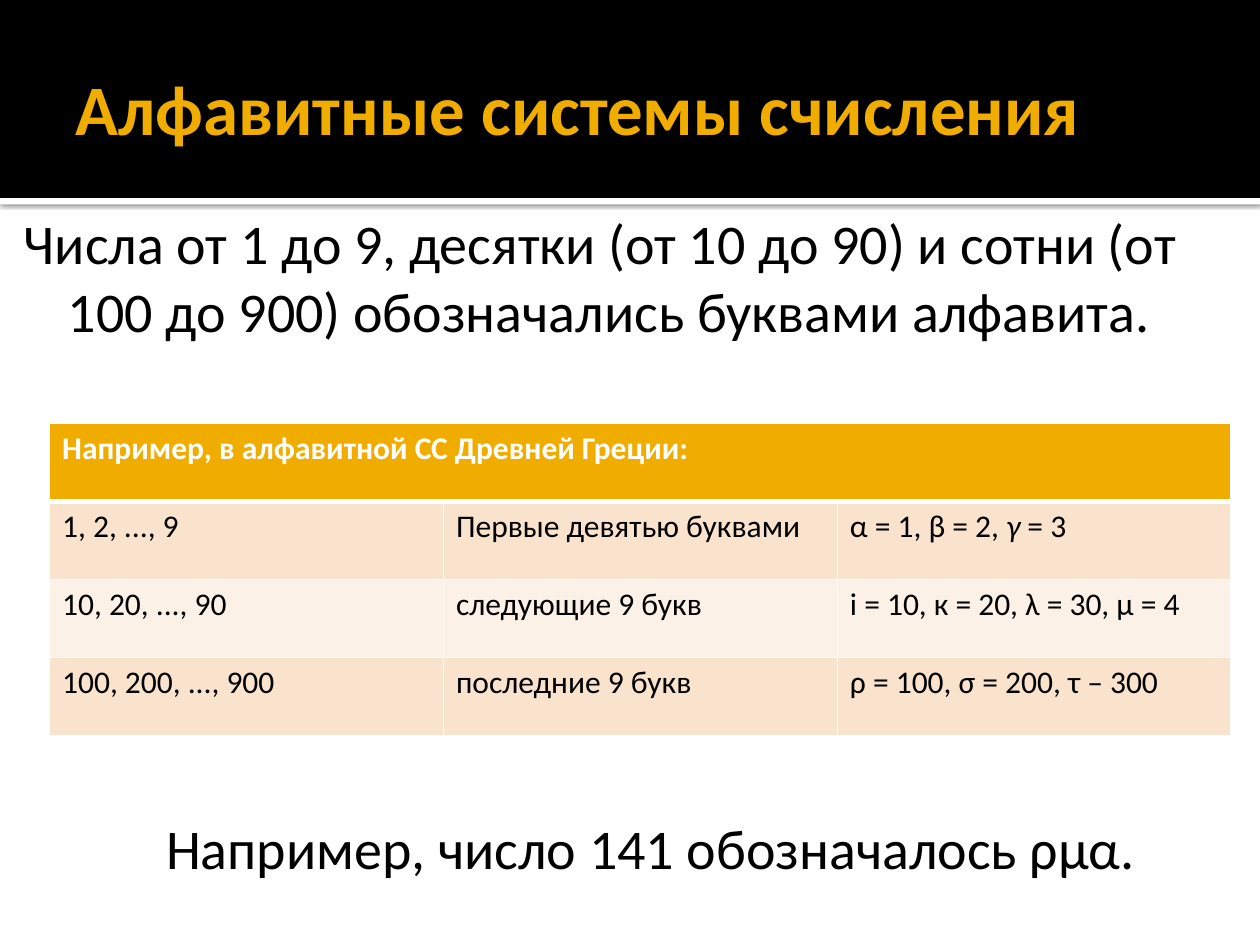
import pptx
import pptx.util
import pptx.dml.color
import pptx.enum.shapes
import pptx.enum.text
import pptx.oxml
from pptx.util import Cm, Pt

NS = 'xmlns:a="http://schemas.openxmlformats.org/drawingml/2006/main"'
ALIGN = pptx.enum.text.PP_ALIGN
ANCHOR = pptx.enum.text.MSO_ANCHOR


def rgb(value):
    return pptx.dml.color.RGBColor.from_string(value)


class Deck:
    font = "Calibri"
    black, white, accent = "000000", "FFFFFF", "F0AD00"
    bands = ("F9E3CC", "FCF1E7")

    def __init__(self, width, height):
        self.prs = pptx.Presentation()
        self.prs.slide_width, self.prs.slide_height = Cm(width), Cm(height)
        self.s = self.prs.slides.add_slide(self.prs.slide_layouts[5])

    def style(self, p, size, color, bold=False):
        for r in p.runs:
            r.font.name, r.font.size, r.font.bold = self.font, Pt(size), bold
            r.font.color.rgb = rgb(color)

    def margins(self, tf, *values):
        tf.margin_left, tf.margin_top, tf.margin_right, tf.margin_bottom = map(Cm, values)

    def band(self, x, y, w, h, color, shadow=False):
        sp = self.s.shapes.add_shape(
            pptx.enum.shapes.MSO_SHAPE.RECTANGLE, Cm(x), Cm(y), Cm(w), Cm(h))
        sp.shadow.inherit = False
        sp.fill.solid()
        sp.fill.fore_color.rgb = rgb(color)
        sp.line.fill.background()
        if shadow:
            effects = sp._element.spPr.find(pptx.oxml.ns.qn("a:effectLst"))
            effects.append(pptx.oxml.parse_xml(
                f'<a:outerShdw {NS} blurRad="{Pt(2.5)}" dist="{Pt(0.8)}" dir="5400000" '
                'algn="t" rotWithShape="0"><a:srgbClr val="000000">'
                '<a:alpha val="60000"/></a:srgbClr></a:outerShdw>'))

    def title(self, text, x, y, w, h):
        sp = self.s.shapes.title
        sp.left, sp.top, sp.width, sp.height = Cm(x), Cm(y), Cm(w), Cm(h)
        self.s.shapes._spTree.append(sp._element)
        tf = sp.text_frame
        tf.text = text
        tf.auto_size = pptx.enum.text.MSO_AUTO_SIZE.NONE
        tf.vertical_anchor = ANCHOR.MIDDLE
        self.margins(tf, 0.25, 0.13, 0.13, 0.13)
        p = tf.paragraphs[0]
        p.alignment = ALIGN.LEFT
        self.style(p, 40.5, self.accent, True)

    def text(self, text, x, y, w, h, align=ALIGN.LEFT, wrap=True):
        sp = self.s.shapes.add_textbox(Cm(x), Cm(y), Cm(w), Cm(h))
        tf = sp.text_frame
        tf.word_wrap = wrap
        tf.text = text
        p = tf.paragraphs[0]
        p.alignment = align
        self.style(p, 32, self.black)
        return tf

    def hanging_text(self, text, x, y, w, h, left, first):
        tf = self.text(text, x, y, w, h)
        self.margins(tf, 0.15, 0.25, 0.25, 0.13)
        pPr = tf.paragraphs[0]._p.get_or_add_pPr()
        pPr.set("marL", str(Cm(left)))
        pPr.set("indent", str(Cm(first)))

    def borders(self, cell, bottom):
        tcPr = cell._tc.get_or_add_tcPr()
        for i, side in enumerate("LRTB"):
            width = Pt(bottom if side == "B" else 1)
            tcPr.insert(i, pptx.oxml.parse_xml(
                f'<a:ln{side} {NS} w="{width}"><a:solidFill>'
                f'<a:srgbClr val="{self.white}"/></a:solidFill></a:ln{side}>'))

    def table(self, header, rows, x, y, w, h):
        table = self.s.shapes.add_table(
            len(rows) + 1, len(rows[0]), Cm(x), Cm(y), Cm(w), Cm(h)).table
        table.cell(0, 0).merge(table.cell(0, len(rows[0]) - 1))
        grid = [[header] + [""] * (len(rows[0]) - 1)] + rows
        for i, row in enumerate(grid):
            head = i == 0
            for j, content in enumerate(row):
                cell = table.cell(i, j)
                cell.fill.solid()
                cell.fill.fore_color.rgb = rgb(self.accent if head else self.bands[(i - 1) % 2])
                self.borders(cell, 3 if head else 1)
                p = cell.text_frame.paragraphs[0]
                before, italic, after = content.partition("γ ")
                p.text = before
                if italic:
                    for part in (italic, after):
                        p.add_run().text = part
                self.style(p, 18, self.white if head else self.black, head)
                if italic:
                    p.runs[1].font.italic = True


def main():
    d = Deck(25.4, 19.05)
    d.band(0, 3.99, 25.4, 0.13, d.white, shadow=True)
    d.band(0, 0, 25.4, 3.99, d.black)
    d.title("Алфавитные системы счисления", 1.27, 0.43, 22.86, 3.48)
    d.hanging_text(
        "Числа от 1 до 9, десятки (от 10 до 90) и сотни (от 100 до 900) "
        "обозначались буквами алфавита.", 0, 3.96, 24.71, 3.58, 1.22, -0.89)
    d.table("Например, в алфавитной СС Древней Греции:", [
        ["1, 2, ..., 9", "Первые девятью буквами", "α = 1, β = 2, γ = 3"],
        ["10, 20, ..., 90", "следующие 9 букв", "i = 10, к = 20, λ = 30, μ = 4"],
        ["100, 200, ..., 900", "последние 9 букв", "ρ = 100, σ = 200, τ – 300"],
    ], 1, 8.53, 23.82, 6.3)
    d.text("Например, число 141 обозначалось ρμα.",
           2.97, 16.28, 20.32, 1.63, ALIGN.CENTER, wrap=False)
    d.prs.save("out.pptx")


if __name__ == "__main__":
    main()
